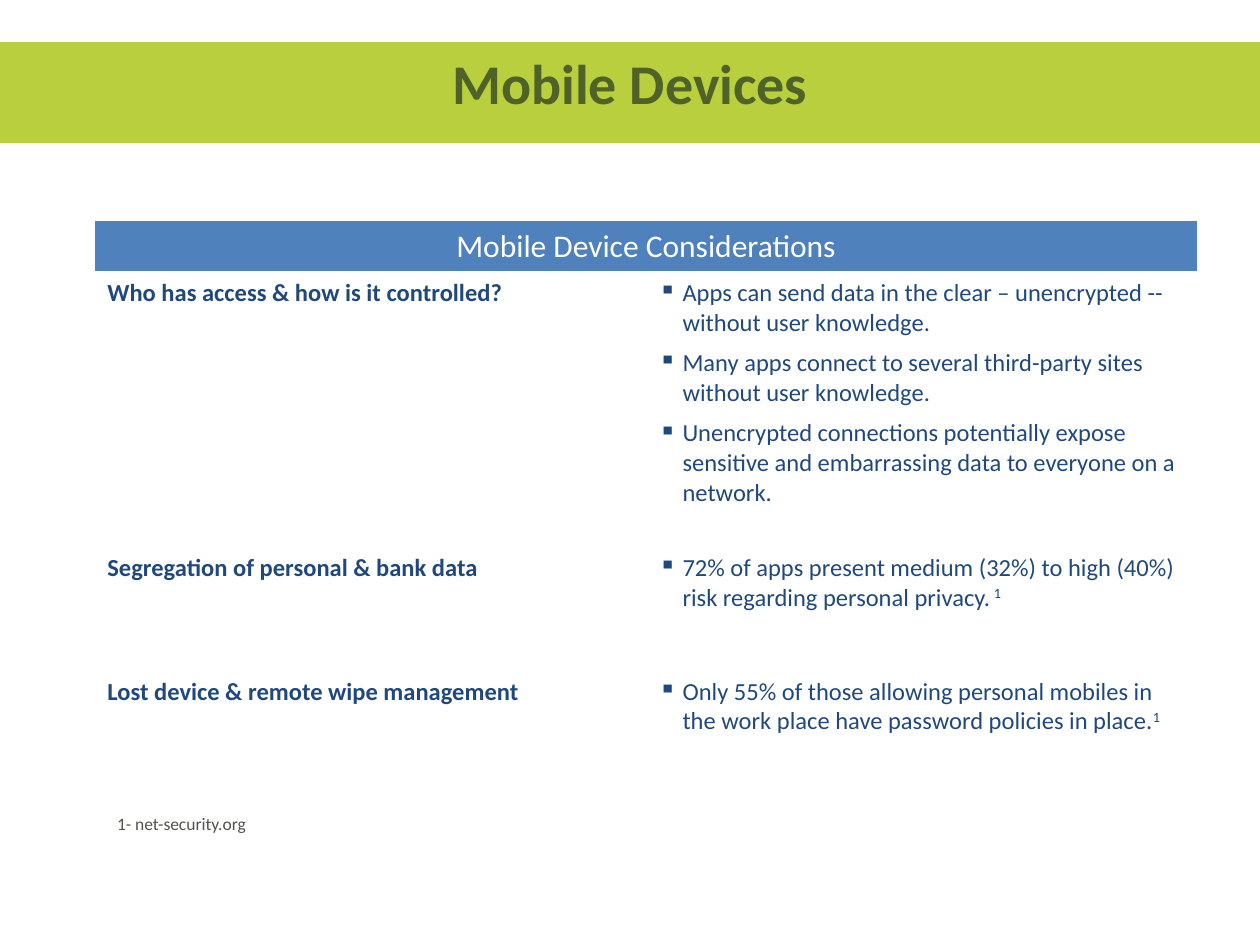
from lxml import etree
from pptx import Presentation
from pptx.dml.color import RGBColor
from pptx.enum.shapes import MSO_SHAPE
from pptx.enum.text import MSO_ANCHOR, PP_ALIGN
from pptx.oxml.ns import qn
from pptx.util import Cm, Pt

RECT = MSO_SHAPE.RECTANGLE
TOP = MSO_ANCHOR.TOP
CENTER = PP_ALIGN.CENTER

FONT = "Calibri"
COLORS = {
    "band": "BACF3D",
    "title": "4F6228",
    "header": "4F81BD",
    "white": "FFFFFF",
    "body": "1F497D",
    "note": "54534A",
}

HEADER = "Mobile Device Considerations"
# Each row: height in cm, topic, points as (text, superscript), space after in pt
ROWS = [
    (5.54, "Who has access & how is it controlled?", [
        ("Apps can send data in the clear – unencrypted -- without user knowledge.", ""),
        ("Many apps connect to several third-party sites without user knowledge.", ""),
        ("Unencrypted connections potentially expose sensitive and embarrassing "
         "data to everyone on a network.", ""),
    ], 6),
    (1.45, "Segregation of personal & bank data", [
        ("72% of apps present medium (32%) to high (40%) risk regarding "
         "personal privacy.", " 1"),
    ], 0),
    (1.04, "", [], 0),
    (1.45, "Lost device & remote wipe management", [
        ("Only 55% of those allowing personal mobiles in the work place have "
         "password policies in place.", "1"),
    ], 0),
]


def rgb(name):
    return RGBColor.from_string(COLORS[name])


def style_run(r, size, color, bold=False):
    r.font.name = FONT
    r.font.size = Pt(size)
    r.font.bold = bold
    r.font.color.rgb = rgb(color)


def add_run(p, text, size, color, bold=False):
    r = p.add_run()
    r.text = text
    style_run(r, size, color, bold)
    return r


def add_bullet(p, indent):
    pPr = p._p.get_or_add_pPr()
    pPr.set("marL", str(indent))
    pPr.set("indent", str(-indent))
    etree.SubElement(pPr, qn("a:buChar")).set("char", "▪")


def add_title_band(slide, left, top, width, height):
    # Colour band, placed behind the title
    band = slide.shapes.add_shape(RECT, left, top, width, height)
    band.shadow.inherit = False
    band.fill.solid()
    band.fill.fore_color.rgb = rgb("band")
    band.line.fill.background()
    slide.shapes._spTree.insert(2, band._element)

    # Title
    title = slide.shapes.title
    margin = Cm(1.27)
    title.left, title.top = left + margin, top
    title.width, title.height = width - 2 * margin, Cm(3.18)
    tf = title.text_frame
    tf.text = "Mobile Devices"
    tf.vertical_anchor = TOP
    p = tf.paragraphs[0]
    p.alignment = CENTER
    style_run(p.runs[0], 32, "title", True)


def fill_points(tf, points, space_after):
    for i, (text, mark) in enumerate(points):
        p = tf.paragraphs[0] if i == 0 else tf.add_paragraph()
        add_bullet(p, Cm(0.48))
        p.space_after = Pt(space_after)
        add_run(p, text, 14, "body")
        if mark:
            r = add_run(p, mark, 14, "body")
            r._r.get_or_add_rPr().set("baseline", "30000")


def add_considerations(slide, left, top, width):
    heights = [Cm(1)] + [Cm(row[0]) for row in ROWS]
    table = slide.shapes.add_table(
        len(heights), 2, left, top, width, sum(heights)).table
    table.horz_banding = False
    for row, height in zip(table.rows, heights):
        row.height = height

    # Header across both columns
    head = table.cell(0, 0)
    head.merge(table.cell(0, 1))
    head.fill.solid()
    head.fill.fore_color.rgb = rgb("header")
    p = head.text_frame.paragraphs[0]
    p.alignment = CENTER
    add_run(p, HEADER, 18, "white")

    # Topics and points
    for i, (_, topic, points, space_after) in enumerate(ROWS, start=1):
        left_cell, right_cell = table.cell(i, 0), table.cell(i, 1)
        left_cell.fill.background()
        right_cell.fill.background()
        if topic:
            add_run(left_cell.text_frame.paragraphs[0], topic, 14, "body", True)
        fill_points(right_cell.text_frame, points, space_after)


def add_footnote(slide, left, top, width, height):
    tf = slide.shapes.add_textbox(left, top, width, height).text_frame
    tf.word_wrap = True
    add_run(tf.paragraphs[0], "1- net-security.org", 10, "note")


def main():
    prs = Presentation()
    prs.slide_width, prs.slide_height = Cm(25.4), Cm(19.05)
    slide = prs.slides.add_slide(prs.slide_layouts[5])
    add_title_band(slide, Cm(0), Cm(0.85), prs.slide_width, Cm(2.03))
    add_considerations(slide, Cm(1.91), Cm(4.45), Cm(22.23))
    add_footnote(slide, Cm(2.11), Cm(16.26), Cm(5.72), Cm(0.68))
    prs.save("out.pptx")


if __name__ == "__main__":
    main()
